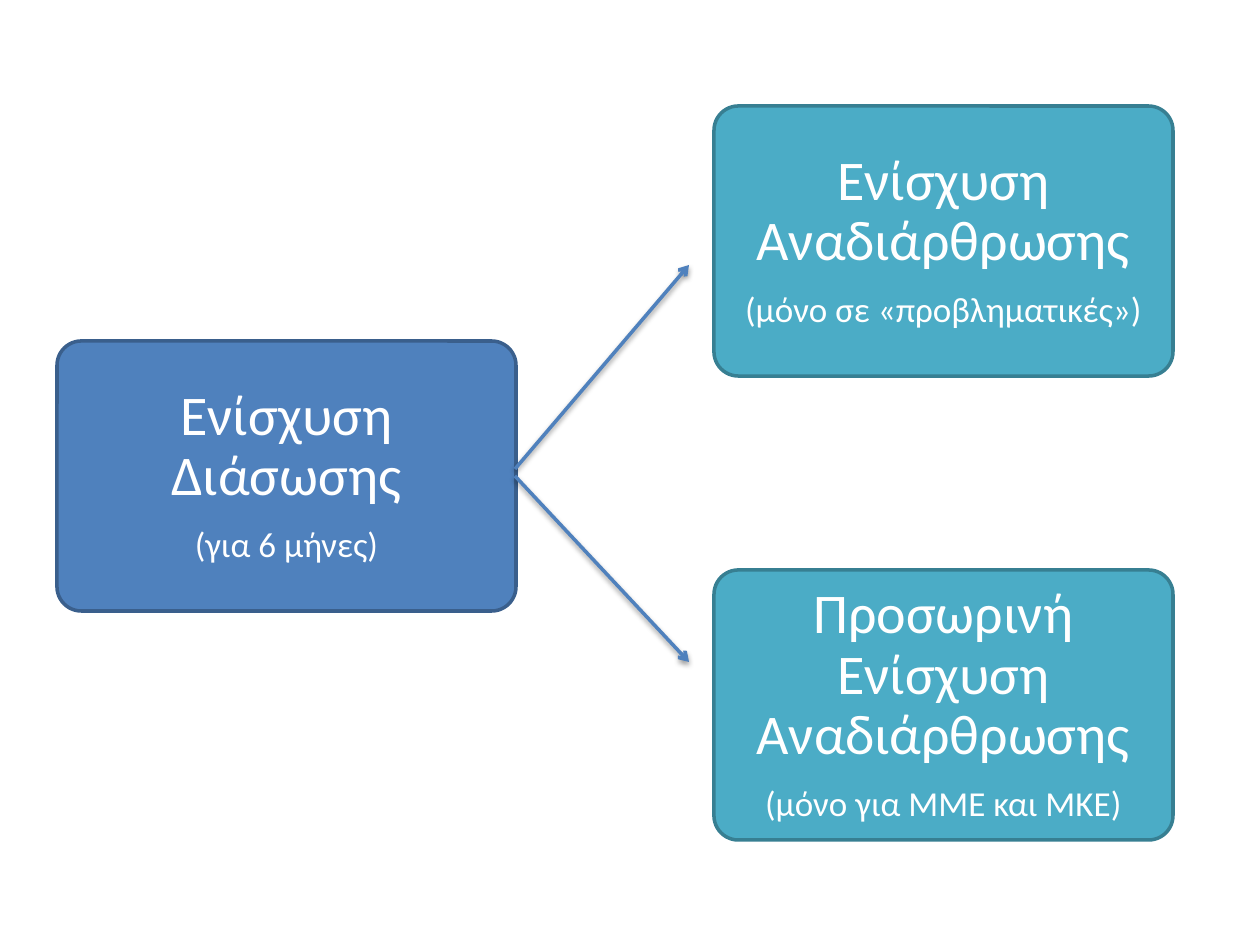
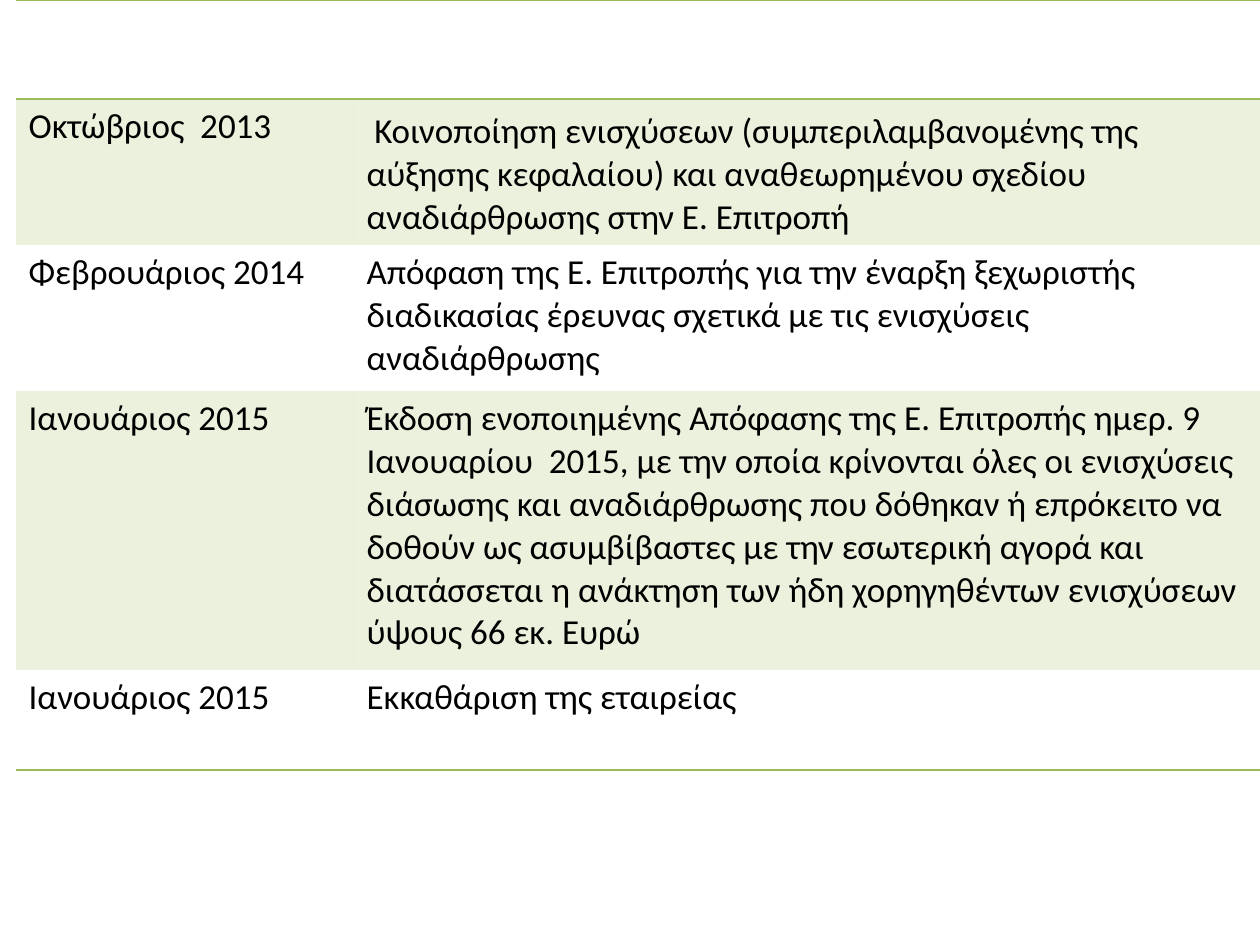
from lxml.etree import SubElement
from pptx import Presentation
from pptx.dml.color import RGBColor
from pptx.enum.shapes import MSO_CONNECTOR, MSO_SHAPE
from pptx.enum.text import MSO_ANCHOR, PP_ALIGN
from pptx.oxml import parse_xml
from pptx.oxml.ns import nsdecls, qn
from pptx.util import Pt

EMU_PER_PX = 914400 / 126
NO_TABLE_STYLE = "{2D5ABB26-0587-4C30-8999-92F81FD0307C}"

BLUE, BLUE_EDGE = "4F81BD", "3A5F8C"
TEAL, TEAL_EDGE = "4BACC6", "377F92"
GREEN, WHITE, BLACK = "9BBB59", "FFFFFF", "000000"


def px(length):
    return round(length * EMU_PER_PX)


def color(hex_code):
    return RGBColor.from_string(hex_code)


def apply(target, values):
    for name, value in values.items():
        setattr(target, name, value)


class Deck:
    font = "Calibri"
    line_width = Pt(2)
    inset = px(8)

    def __init__(self, width, height):
        self.presentation = Presentation()
        apply(self.presentation, {"slide_width": px(width), "slide_height": px(height)})
        self.slide = None

    def add_slide(self):
        self.slide = self.presentation.slides.add_slide(self.presentation.slide_layouts[6])

    def add_text(self, paragraph, text, size, text_color):
        run = paragraph.add_run()
        run.text = text
        apply(run.font, {"name": self.font, "size": Pt(size)})
        run.font.color.rgb = color(text_color)

    def paint_line(self, line, line_color):
        line.color.rgb = color(line_color)
        line.width = self.line_width

    def box(self, left, top, width, height, fill, edge, heading, note):
        shape = self.slide.shapes.add_shape(
            MSO_SHAPE.ROUNDED_RECTANGLE, px(left), px(top), px(width), px(height))
        shape.adjustments[0] = 0.09
        shape.shadow.inherit = False
        shape.fill.solid()
        shape.fill.fore_color.rgb = color(fill)
        self.paint_line(shape.line, edge)
        frame = shape.text_frame
        apply(frame, {"word_wrap": True, "vertical_anchor": MSO_ANCHOR.MIDDLE,
                      "margin_left": self.inset, "margin_right": self.inset,
                      "margin_top": self.inset, "margin_bottom": self.inset})
        for index, (text, size) in enumerate([(heading, 32), (note, 20)]):
            paragraph = frame.add_paragraph() if index else frame.paragraphs[0]
            apply(paragraph, {"alignment": PP_ALIGN.CENTER, "line_spacing": 0.9,
                              "space_after": Pt(0.35 * size)})
            self.add_text(paragraph, text, size, WHITE)

    def arrow(self, start, end):
        connector = self.slide.shapes.add_connector(
            MSO_CONNECTOR.STRAIGHT, *map(px, start + end))
        self.paint_line(connector.line, BLUE)
        properties = connector._element.spPr
        SubElement(properties.find(qn("a:ln")), qn("a:tailEnd"), type="arrow")
        # Soft shadow falling straight down
        properties.append(parse_xml(
            f'<a:effectLst {nsdecls("a")}>'
            f'<a:outerShdw blurRad="{Pt(3.1)}" dist="{Pt(1.6)}" dir="5400000" rotWithShape="0">'
            f'<a:srgbClr val="{BLACK}"><a:alpha val="38000"/></a:srgbClr>'
            '</a:outerShdw></a:effectLst>'))

    def cell_border(self, cell, sides):
        properties = cell._tc.get_or_add_tcPr()
        for index, side in enumerate(sides):
            properties.insert(index, parse_xml(
                f'<a:ln{side} {nsdecls("a")} w="{Pt(1)}"><a:solidFill>'
                f'<a:srgbClr val="{GREEN}"/></a:solidFill></a:ln{side}>'))

    def tint(self, cell, fill, percent):
        cell.fill.solid()
        cell.fill.fore_color.rgb = color(fill)
        fill_color = cell._tc.tcPr.find(qn("a:solidFill")).find(qn("a:srgbClr"))
        SubElement(fill_color, qn("a:alpha"), val=str(percent * 1000))

    def timeline(self, left, top, column_widths, row_heights, events):
        table = self.slide.shapes.add_table(
            len(row_heights), len(column_widths), px(left), px(top),
            px(sum(column_widths)), px(sum(row_heights))).table
        apply(table, {"first_row": False, "horz_banding": False})
        table._tbl.tblPr.find(qn("a:tableStyleId")).text = NO_TABLE_STYLE
        for column, width in zip(table.columns, column_widths):
            column.width = px(width)
        for row, height in zip(table.rows, row_heights):
            row.height = px(height)
        # The header row stays empty between its two rules
        for cell in table.rows[0].cells:
            self.cell_border(cell, "TB")
            cell.fill.background()
        for number, event in enumerate(events, 1):
            for cell, text in zip(table.rows[number].cells, event):
                self.add_text(cell.text_frame.paragraphs[0], text, 20, BLACK)
                if number == len(events):
                    self.cell_border(cell, "B")
                if number % 2:
                    self.tint(cell, GREEN, 20)
                else:
                    cell.fill.background()
        return table


def main():
    deck = Deck(1260, 945)

    # Rescue aid leads to two kinds of restructuring aid
    deck.add_slide()
    box_size = (459, 270)
    deck.box(57, 341, *box_size, BLUE, BLUE_EDGE, "Ενίσχυση Διάσωσης", "(για 6 μήνες)")
    outcomes = [
        (106, "Ενίσχυση Αναδιάρθρωσης", "(μόνο σε «προβληματικές»)"),
        (570, "Προσωρινή Ενίσχυση Αναδιάρθρωσης", "(μόνο για ΜΜΕ και ΜΚΕ)"),
    ]
    for top, heading, note in outcomes:
        deck.box(714, top, *box_size, TEAL, TEAL_EDGE, heading, note)
    for start_y, end_y in [(469, 265), (476, 662)]:
        deck.arrow((515, start_y), (689, end_y))

    # Timeline of the case
    deck.add_slide()
    events = [
        ("Οκτώβριος  2013",
         " Κοινοποίηση ενισχύσεων (συμπεριλαμβανομένης της αύξησης κεφαλαίου) και "
         "αναθεωρημένου σχεδίου αναδιάρθρωσης στην Ε. Επιτροπή"),
        ("Φεβρουάριος 2014",
         "Απόφαση της Ε. Επιτροπής για την έναρξη ξεχωριστής διαδικασίας έρευνας "
         "σχετικά με τις ενισχύσεις αναδιάρθρωσης"),
        ("Ιανουάριος 2015",
         "Έκδοση ενοποιημένης Απόφασης της Ε. Επιτροπής ημερ. 9 Ιανουαρίου  2015, με την "
         "οποία κρίνονται όλες οι ενισχύσεις διάσωσης και αναδιάρθρωσης που δόθηκαν ή "
         "επρόκειτο να δοθούν ως ασυμβίβαστες με την εσωτερική αγορά και διατάσσεται η "
         "ανάκτηση των ήδη χορηγηθέντων ενισχύσεων ύψους 66 εκ. Ευρώ"),
        ("Ιανουάριος 2015", "Εκκαθάριση της εταιρείας"),
    ]
    table = deck.timeline(16, 0, [338, 907], [99, 146, 146, 279, 100], events)
    table.cell(1, 1).vertical_anchor = MSO_ANCHOR.BOTTOM

    deck.presentation.save("out.pptx")


if __name__ == "__main__":
    main()
